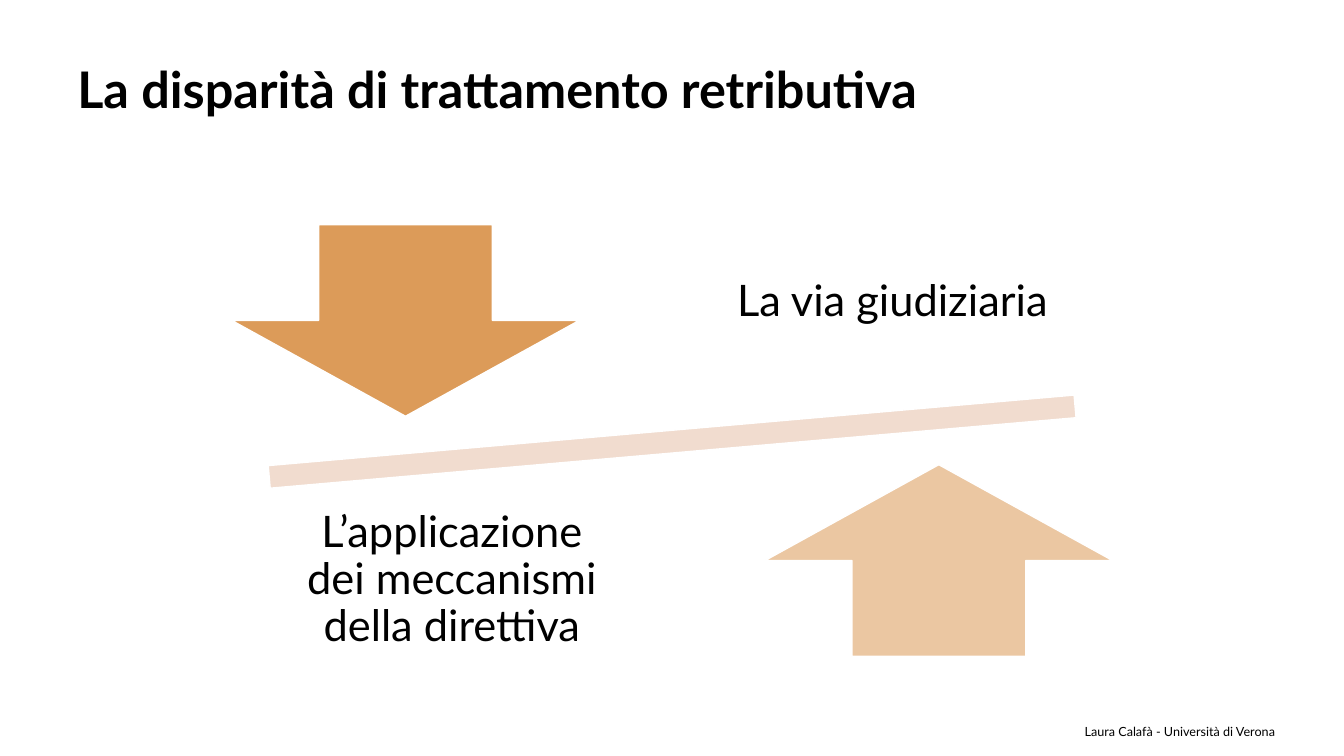
from dataclasses import dataclass

import lxml.etree
import pptx
import pptx.dml.color
import pptx.enum.shapes
import pptx.enum.text
import pptx.oxml.ns
import pptx.util

Cm = pptx.util.Cm
Pt = pptx.util.Pt
Kind = pptx.enum.shapes.MSO_SHAPE
Align = pptx.enum.text.PP_ALIGN
Anchor = pptx.enum.text.MSO_ANCHOR


@dataclass
class Box:
    left: float
    top: float
    width: float
    height: float


@dataclass
class Form:
    kind: Kind
    box: Box
    fill: str
    opaque: int = 100
    turn: float = 0


@dataclass
class Label:
    text: str
    box: Box
    size: float
    align: Align
    anchor: Anchor = Anchor.MIDDLE
    bold: bool = False
    pad: float | None = None
    space: float = 1.0


def color(value: str) -> pptx.dml.color.RGBColor:
    return pptx.dml.color.RGBColor.from_string(value)


def place(box: Box) -> list[pptx.util.Length]:
    return [Cm(side) for side in (box.left, box.top, box.width, box.height)]


def draw(slide: pptx.slide.Slide, form: Form) -> None:
    shape = slide.shapes.add_shape(form.kind, *place(form.box))
    shape.shadow.inherit = False
    shape.rotation = form.turn
    shape.fill.solid()
    shape.fill.fore_color.rgb = color(form.fill)
    shape.line.color.rgb = color("FFFFFF")
    shape.line.width = Pt(1)
    if form.opaque < 100:
        qn = pptx.oxml.ns.qn
        tint = shape.element.spPr.find(qn("a:solidFill")).find(qn("a:srgbClr"))
        alpha = lxml.etree.SubElement(tint, qn("a:alpha"))
        alpha.set("val", str(form.opaque * 1000))


def write(slide: pptx.slide.Slide, label: Label) -> None:
    frame = slide.shapes.add_textbox(*place(label.box)).text_frame
    frame.word_wrap = True
    frame.vertical_anchor = label.anchor
    if label.pad is not None:
        frame.margin_left = frame.margin_right = Cm(label.pad)
        frame.margin_top = frame.margin_bottom = Cm(label.pad)
    para = frame.paragraphs[0]
    para.alignment = label.align
    para.line_spacing = label.space
    run = para.add_run()
    run.text = label.text
    run.font.name = "Lato"
    run.font.size = Pt(label.size)
    run.font.bold = label.bold
    run.font.color.rgb = color("000000")


def path_label(text: str, left: float, top: float) -> Label:
    return Label(text, Box(left, top, 9.35, 5.08), 31, Align.CENTER,
                 pad=0.61, space=0.9)


def arrow(kind: Kind, left: float, top: float, opaque: int) -> Form:
    return Form(kind, Box(left, top, 8.76, 4.83), "D99147", opaque)


# Tilted beam and the two opposing arrows
FORMS = [
    Form(Kind.MATH_MINUS, Box(3.07, 9.91, 27.74, 2.44), "F1DCCF", turn=355),
    arrow(Kind.DOWN_ARROW, 5.84, 5.66, 90),
    arrow(Kind.UP_ARROW, 19.28, 11.71, 50),
]

# Title, the two paths and the footer
LABELS = [
    Label("La disparità di trattamento retributiva",
          Box(1.7, 1.52, 29.59, 3.15), 36, Align.LEFT, Anchor.TOP,
          bold=True, space=0.9),
    path_label("La via giudiziaria", 17.81, 5.08),
    path_label("L’applicazione dei meccanismi della direttiva", 6.71, 12.09),
    Label("Laura Calafà - Università di Verona ",
          Box(24.66, 17.93, 7.8, 1.02), 9, Align.RIGHT),
]


def main() -> None:
    deck = pptx.Presentation()
    deck.slide_width, deck.slide_height = Cm(33.87), Cm(19.05)
    slide = deck.slides.add_slide(deck.slide_layouts[6])
    for form in FORMS:
        draw(slide, form)
    for label in LABELS:
        write(slide, label)
    deck.save("out.pptx")


if __name__ == "__main__":
    main()
